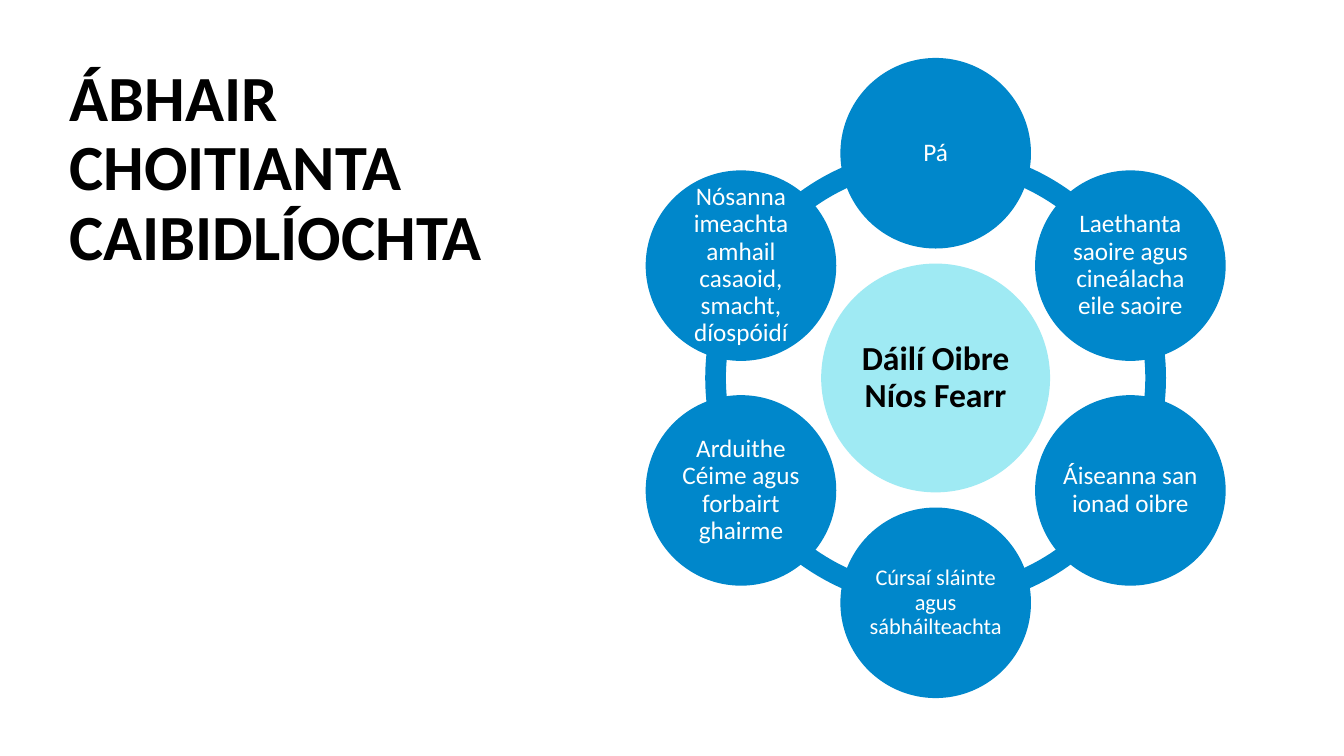
from dataclasses import dataclass
from itertools import pairwise
from math import cos, radians, sin

from pptx import Presentation
from pptx.dml.color import RGBColor
from pptx.enum.shapes import MSO_SHAPE
from pptx.enum.text import MSO_ANCHOR, MSO_AUTO_SIZE, PP_ALIGN
from pptx.util import Inches, Pt


@dataclass(frozen=True)
class Theme:
    font: str = "Calibri"
    blue: RGBColor = RGBColor(0x00, 0x87, 0xCB)
    aqua: RGBColor = RGBColor(0x9F, 0xEA, 0xF3)
    black: RGBColor = RGBColor(0x00, 0x00, 0x00)
    white: RGBColor = RGBColor(0xFF, 0xFF, 0xFF)
    title_size: int = 46
    hub_size: int = 24
    topic_size: int = 18
    long_word_size: int = 16


THEME = Theme()
CENTER_X, CENTER_Y = 9.28, 3.75
ORBIT_RADIUS = 2.23
RING_DIAMETER = 4.57
RING_THICKNESS = 0.045
RING_STOPS = (18, 54, 90, 126, 162, 198, 18)
HUB_DIAMETER = 2.27
TOPIC_DIAMETER = 1.89

TITLE_LINES = ("ÁBHAIR", "CHOITIANTA", "CAIBIDLÍOCHTA")
TOPICS = (
    ("Pá", THEME.topic_size),
    ("Laethanta saoire agus cineálacha eile saoire", THEME.topic_size),
    ("Áiseanna san ionad oibre", THEME.topic_size),
    ("Cúrsaí sláinte agus sábháilteachta", THEME.long_word_size),
    ("Arduithe Céime agus forbairt ghairme", THEME.topic_size),
    ("Nósanna imeachta amhail casaoid, smacht, díospóidí", THEME.topic_size),
)


def add_run(paragraph, text, size, color, bold=False):
    run = paragraph.add_run()
    run.text = text
    run.font.name = THEME.font
    run.font.size = Pt(size)
    run.font.bold = bold
    run.font.color.rgb = color


def add_round(slide, preset, x, y, diameter, fill):
    disc = slide.shapes.add_shape(
        preset,
        Inches(x - diameter / 2),
        Inches(y - diameter / 2),
        Inches(diameter),
        Inches(diameter),
    )
    disc.shadow.inherit = False
    disc.fill.solid()
    disc.fill.fore_color.rgb = fill
    disc.line.fill.background()
    return disc


def add_ring(slide):
    for start, end in pairwise(RING_STOPS):
        arc = add_round(slide, MSO_SHAPE.BLOCK_ARC, CENTER_X, CENTER_Y, RING_DIAMETER, THEME.blue)
        arc.adjustments[0] = start * 0.6
        arc.adjustments[1] = end * 0.6
        arc.adjustments[2] = RING_THICKNESS


def add_circle(slide, x, y, diameter, fill, text, size, color, bold=False):
    circle = add_round(slide, MSO_SHAPE.OVAL, x, y, diameter, fill)
    frame = circle.text_frame
    frame.margin_left = frame.margin_right = frame.margin_top = frame.margin_bottom = 0
    frame.word_wrap = True
    frame.vertical_anchor = MSO_ANCHOR.MIDDLE
    paragraph = frame.paragraphs[0]
    paragraph.alignment = PP_ALIGN.CENTER
    paragraph.line_spacing = 0.9
    add_run(paragraph, text, size, color, bold)


def add_topics(slide):
    for index, (topic, size) in enumerate(TOPICS):
        angle = radians(index * 360 / len(TOPICS) - 90)
        x = CENTER_X + ORBIT_RADIUS * cos(angle)
        y = CENTER_Y + ORBIT_RADIUS * sin(angle)
        add_circle(slide, x, y, TOPIC_DIAMETER, THEME.blue, topic, size, THEME.white)


def fill_title(slide):
    title = slide.shapes.title
    title.left, title.top = Inches(0.59), Inches(0.6)
    title.width, title.height = Inches(12.15), Inches(2.51)
    frame = title.text_frame
    frame.word_wrap = True
    frame.auto_size = MSO_AUTO_SIZE.NONE
    frame.vertical_anchor = MSO_ANCHOR.TOP
    paragraph = frame.paragraphs[0]
    paragraph.alignment = PP_ALIGN.LEFT
    paragraph.line_spacing = 0.9
    for index, line in enumerate(TITLE_LINES):
        if index:
            paragraph.add_line_break()
        add_run(paragraph, line, THEME.title_size, THEME.black, True)


def main():
    deck = Presentation()
    deck.slide_width, deck.slide_height = Inches(13.33), Inches(7.5)
    slide = deck.slides.add_slide(deck.slide_layouts.get_by_name("Title Only"))
    fill_title(slide)
    add_ring(slide)
    add_circle(
        slide, CENTER_X, CENTER_Y, HUB_DIAMETER, THEME.aqua,
        "Dáilí Oibre Níos Fearr", THEME.hub_size, THEME.black, True,
    )
    add_topics(slide)
    deck.save("out.pptx")


if __name__ == "__main__":
    main()
